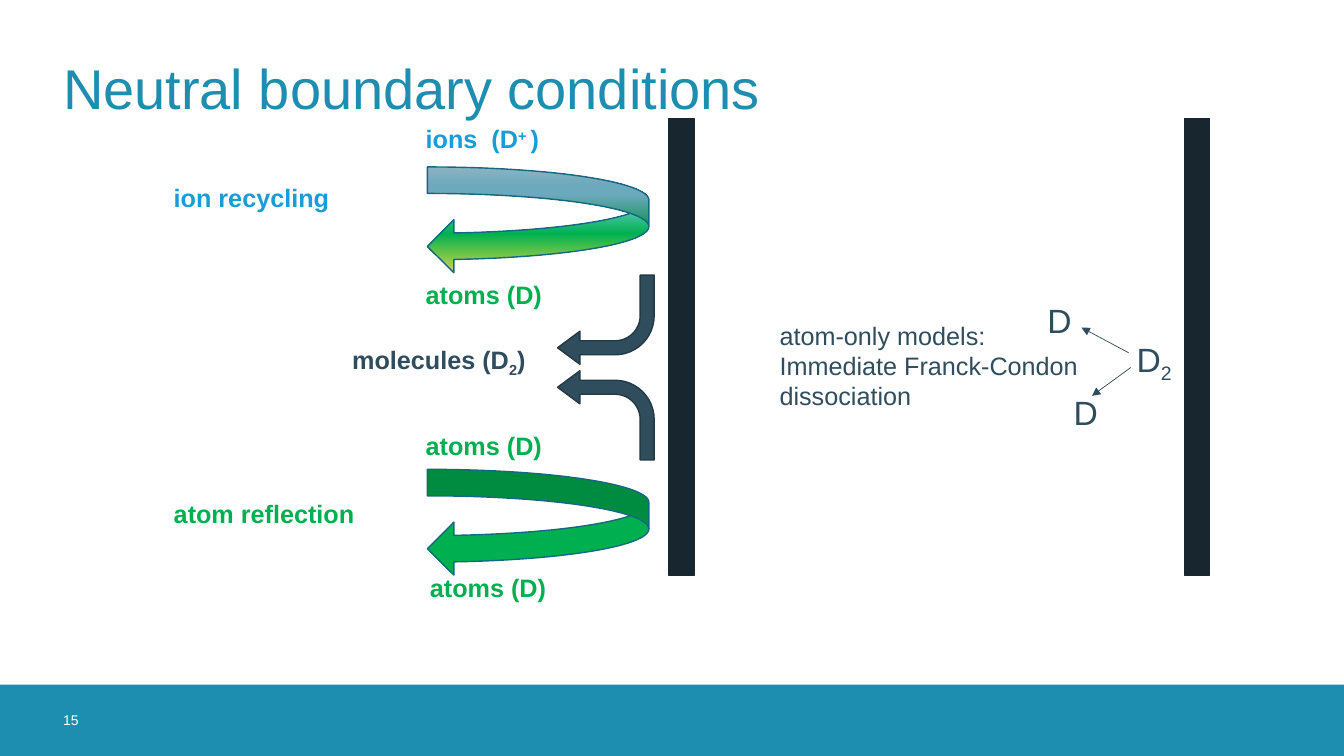
from typing import NamedTuple

from lxml import etree
from pptx import Presentation
from pptx.dml.color import RGBColor
from pptx.enum.shapes import MSO_CONNECTOR, MSO_SHAPE
from pptx.enum.text import MSO_ANCHOR, MSO_AUTO_SIZE, PP_ALIGN
from pptx.oxml.ns import qn
from pptx.util import Emu, Pt

RECT = MSO_SHAPE.RECTANGLE
U_TURN = MSO_SHAPE.CURVED_LEFT_ARROW
BENT = MSO_SHAPE.BENT_ARROW
STRAIGHT = MSO_CONNECTOR.STRAIGHT
MIDDLE, TOP = MSO_ANCHOR.MIDDLE, MSO_ANCHOR.TOP
FIT_SHAPE, NO_FIT = MSO_AUTO_SIZE.SHAPE_TO_FIT_TEXT, MSO_AUTO_SIZE.NONE
LEFT = PP_ALIGN.LEFT

PX = 9525
FONT = "Arial"
COLORS = {
    "teal": "1D8DB0", "white": "FFFFFF", "wall": "18272F", "outline": "156882",
    "ion": "189DD7", "atom": "00B050", "slate": "2F4D5D", "bent_line": "233945",
}
RECYCLING_STOPS = [(0, "D4D842"), (37, "00B050"), (74, "89D4EC"),
                   (83, "89D4EC"), (100, "B0E2F2")]
BENT_ADJUSTMENTS = (0.157, 0.186, 0.25, 0.438)


class Run(NamedTuple):
    text: str
    baseline: int = 0


class Label(NamedTuple):
    x: int
    y: int
    w: int
    h: int
    color: str
    paragraphs: list[list[Run]]
    size: int = 18
    bold: bool = False


class Block(NamedTuple):
    kind: int
    x: int
    y: int
    w: int
    h: int
    fill: str
    line: str = ""


class Arrow(NamedTuple):
    x1: int
    y1: int
    x2: int
    y2: int


ATOMS = [[Run("atoms (D)")]]
D_ATOM = [[Run("D")]]

BAND = Block(RECT, 0, 652, 1280, 68, "teal")
WALLS = [Block(RECT, x, 113, 24, 435, "wall", "wall") for x in (637, 1128)]
RECYCLING, REFLECTION = [
    Block(U_TURN, 407, y, 211, 101, "atom", "outline") for y in (159, 447)]
UPPER_BENT, LOWER_BENT = [
    Block(BENT, 531, y, 92, 85, "slate", "bent_line") for y in (262, 353)]

LABELS = [
    Label(396, 113, 211, 38, "ion",
          [[Run("ions  (D"), Run("+ ", 30), Run(")")]], bold=True),
    Label(396, 261, 211, 38, "atom", ATOMS, bold=True),
    Label(396, 405, 211, 38, "atom", ATOMS, bold=True),
    Label(400, 540, 211, 38, "atom", ATOMS, bold=True),
    Label(156, 169, 330, 38, "ion", [[Run("ion recycling")]], bold=True),
    Label(156, 470, 330, 38, "atom", [[Run("atom reflection")]], bold=True),
    Label(326, 323, 189, 38, "slate",
          [[Run("molecules (D"), Run("2", -25), Run(")")]], bold=True),
    Label(733, 300, 326, 97, "slate",
          [[Run("atom-only models:")],
           [Run("Immediate Franck-Condon dissociation")]]),
    Label(1073, 318, 57, 48, "slate", [[Run("D"), Run("2", -25)]], 24),
    Label(988, 281, 57, 48, "slate", D_ATOM, 24),
    Label(1013, 369, 57, 48, "slate", D_ATOM, 24),
]
PAGE_NUMBER = Label(60, 652, 68, 68, "white", [[Run("15")]], 10)
TITLE = Label(60, 22, 1159, 121, "teal",
              [[Run("Neutral boundary conditions")]], 40)
DISSOCIATION = [Arrow(1075, 336, 1030, 312), Arrow(1077, 350, 1040, 377)]


def px(n: int) -> Emu:
    return Emu(n * PX)


def rgb(name: str) -> RGBColor:
    return RGBColor.from_string(COLORS[name])


def write(s, label: Label, boxed: bool = False) -> None:
    tf = s.text_frame
    tf.word_wrap = True
    tf.auto_size = NO_FIT if boxed else FIT_SHAPE
    tf.vertical_anchor = MIDDLE if boxed else TOP
    if boxed:
        tf.margin_left = tf.margin_right = tf.margin_top = tf.margin_bottom = 0
    for i, runs in enumerate(label.paragraphs):
        p = tf.add_paragraph() if i else tf.paragraphs[0]
        p.alignment = LEFT
        for run in runs:
            r = p.add_run()
            r.text = run.text
            r.font.name = FONT
            r.font.size = Pt(label.size)
            r.font.bold = label.bold
            r.font.color.rgb = rgb(label.color)
            if run.baseline:
                r.font._element.set("baseline", str(run.baseline * 1000))


def add_label(slide, label: Label, boxed: bool = False) -> None:
    s = slide.shapes.add_textbox(*map(px, label[:4]))
    write(s, label, boxed)


def add_block(slide, block: Block):
    s = slide.shapes.add_shape(block.kind, *map(px, block[1:5]))
    s.shadow.inherit = False
    s.fill.solid()
    s.fill.fore_color.rgb = rgb(block.fill)
    if block.line:
        s.line.color.rgb = rgb(block.line)
        s.line.width = Pt(1)
    else:
        s.line.fill.background()
    return s


def add_bent_arrow(slide, block: Block, flipped: bool) -> None:
    s = add_block(slide, block)
    for i, value in enumerate(BENT_ADJUSTMENTS):
        s.adjustments[i] = value
    s.rotation = 180
    if flipped:
        s._element.spPr.find(qn("a:xfrm")).set("flipV", "1")


def set_gradient(s, stops: list[tuple[int, str]]) -> None:
    s.fill.gradient()
    s.fill.gradient_angle = 90
    gs_list = s._element.spPr.find(qn("a:gradFill")).find(qn("a:gsLst"))
    for gs in list(gs_list):
        gs_list.remove(gs)
    for position, color in stops:
        gs = etree.SubElement(gs_list, qn("a:gs"), pos=str(position * 1000))
        etree.SubElement(gs, qn("a:srgbClr"), val=color)


def add_arrow(slide, arrow: Arrow) -> None:
    s = slide.shapes.add_connector(STRAIGHT, *map(px, arrow))
    s.line.color.rgb = rgb("slate")
    s.line.width = Pt(0.5)
    etree.SubElement(s.line._get_or_add_ln(), qn("a:tailEnd"), type="triangle")
    etree.SubElement(s._element.spPr, qn("a:effectLst"))


def main() -> None:
    prs = Presentation()
    prs.slide_width, prs.slide_height = px(1280), px(720)
    slide = prs.slides.add_slide(prs.slide_layouts[5])

    add_block(slide, BAND)
    add_label(slide, PAGE_NUMBER, boxed=True)
    title = slide.shapes.title
    title.left, title.top, title.width, title.height = map(px, TITLE[:4])
    write(title, TITLE, boxed=True)

    for wall in WALLS:
        add_block(slide, wall)
    set_gradient(add_block(slide, RECYCLING), RECYCLING_STOPS)
    add_block(slide, REFLECTION)
    add_bent_arrow(slide, UPPER_BENT, flipped=False)
    add_bent_arrow(slide, LOWER_BENT, flipped=True)
    for label in LABELS:
        add_label(slide, label)
    for arrow in DISSOCIATION:
        add_arrow(slide, arrow)

    prs.save("out.pptx")


if __name__ == "__main__":
    main()
